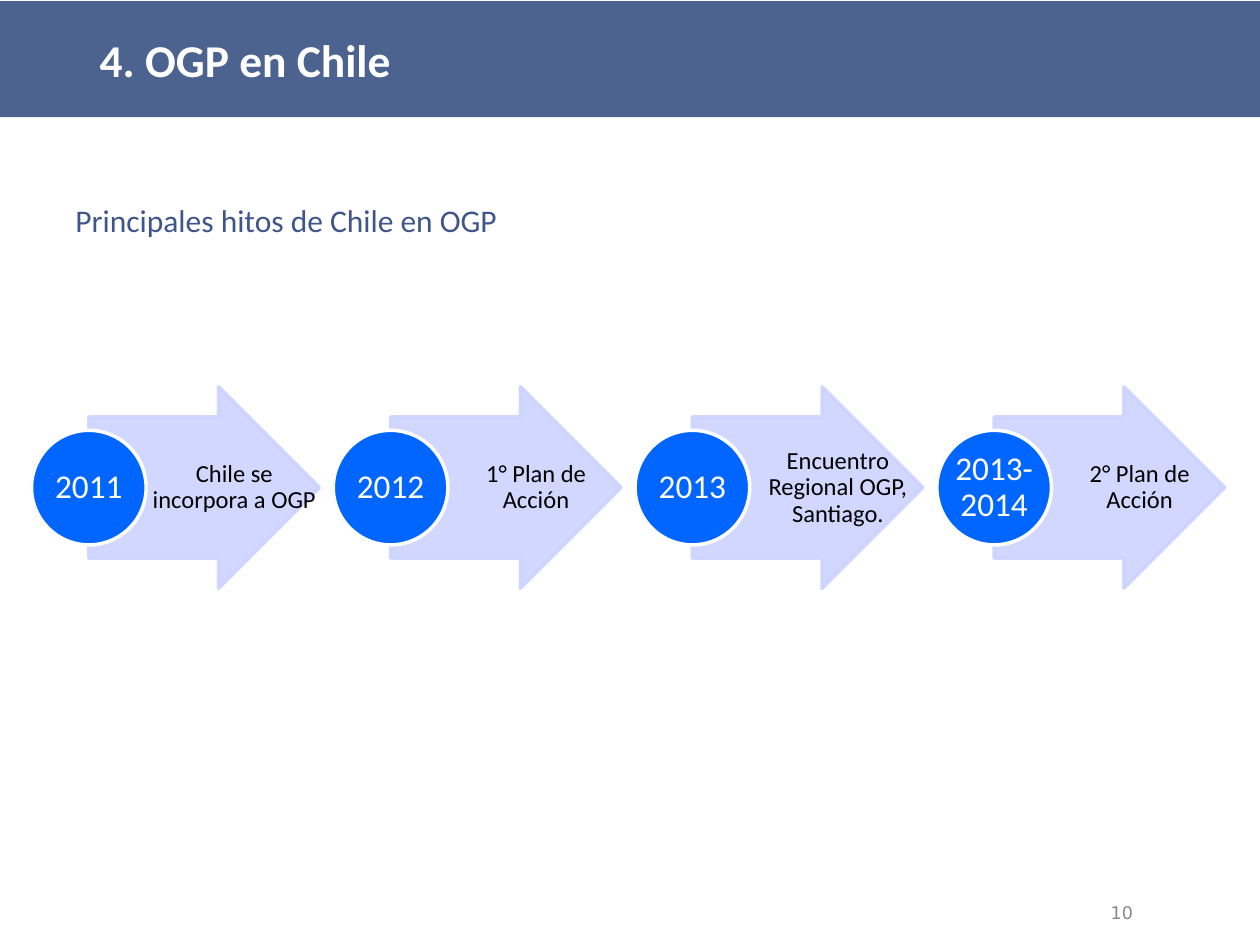
from typing import NamedTuple

from lxml import etree
from pptx import Presentation
from pptx.dml.color import RGBColor
from pptx.enum.shapes import MSO_SHAPE
from pptx.enum.text import MSO_ANCHOR, MSO_AUTO_SIZE, PP_ALIGN
from pptx.oxml.ns import qn
from pptx.util import Inches, Pt

ARROW, OVAL = MSO_SHAPE.RIGHT_ARROW, MSO_SHAPE.OVAL
LEFT, CENTER, RIGHT = PP_ALIGN.LEFT, PP_ALIGN.CENTER, PP_ALIGN.RIGHT
TOP, MIDDLE = MSO_ANCHOR.TOP, MSO_ANCHOR.MIDDLE
NO_FIT = MSO_AUTO_SIZE.NONE

COLORS = {
    "band": "002060",
    "arrow": "CCD3FF",
    "disc": "0066FF",
    "white": "FFFFFF",
    "black": "000000",
    "lead": "40558A",
    "number": "898989",
}

START, PITCH = 0.25, 2.395
DISC = 0.91
ARROW_W, ARROW_H = 1.83, 1.6
LABEL_W = 1.37
MID_Y = 3.87


class Stage(NamedTuple):
    year: str
    event: str


STAGES = [
    Stage("2011", "Chile se incorpora a OGP"),
    Stage("2012", "1° Plan de Acción"),
    Stage("2013", "Encuentro Regional OGP, Santiago."),
    Stage("2013-2014", "2° Plan de Acción"),
]


def rgb(name: str) -> RGBColor:
    return RGBColor.from_string(COLORS[name])


def paint(fill, name: str, alpha: int = 100) -> None:
    """Give a solid fill, with its opacity in percent."""
    fill.solid()
    fill.fore_color.rgb = rgb(name)
    if alpha < 100:
        tint = fill._xPr.find(qn("a:solidFill"))[0]
        etree.SubElement(tint, qn("a:alpha"), val=str(alpha * 1000))


def write(shape, text: str, *, size: float, color: str, font: str = "Calibri",
          bold: bool = False, align=LEFT, anchor=MIDDLE, space: float = 1.0,
          inset: tuple = (0.1, 0.05, 0.1, 0.05)) -> None:
    frame = shape.text_frame
    frame.auto_size = NO_FIT
    frame.word_wrap = True
    frame.vertical_anchor = anchor
    (frame.margin_left, frame.margin_top,
     frame.margin_right, frame.margin_bottom) = map(Inches, inset)
    para = frame.paragraphs[0]
    para.alignment = align
    para.line_spacing = space
    run = para.add_run()
    run.text = text
    run.font.name = font
    run.font.size = Pt(size)
    run.font.bold = bold
    run.font.color.rgb = rgb(color)


def add_box(slide, x: float, y: float, w: float, h: float):
    return slide.shapes.add_textbox(Inches(x), Inches(y), Inches(w), Inches(h))


def add_form(slide, kind, x: float, w: float, h: float, fill: str,
             line: str, alpha: int = 100):
    """Add a preset shape centred on the middle line of the row."""
    form = slide.shapes.add_shape(
        kind, Inches(x), Inches(MID_Y - h / 2), Inches(w), Inches(h))
    form.shadow.inherit = False
    paint(form.fill, fill, alpha)
    paint(form.line.fill, line, alpha)
    form.line.width = Pt(2)
    return form


def add_stage(slide, stage: Stage, x: float) -> None:
    arrow_x = x + DISC / 2
    arrow = add_form(slide, ARROW, arrow_x, ARROW_W, ARROW_H,
                     "arrow", "arrow", 90)
    arrow.adjustments[0] = 0.7
    arrow.adjustments[1] = 0.5
    label = add_box(slide, arrow_x + ARROW_W - LABEL_W, MID_Y - ARROW_H / 2,
                    LABEL_W, ARROW_H)
    write(label, stage.event, size=14, color="black", align=CENTER, space=0.9,
          inset=(0.04, 0.01, 0.02, 0.01))
    disc = add_form(slide, OVAL, x, DISC, DISC, "disc", "white")
    write(disc, stage.year, size=19, color="white", align=CENTER, space=0.9,
          inset=(0, 0, 0, 0))


def add_title(slide, text: str) -> None:
    title = slide.shapes.title
    title.left, title.top = Inches(0), Inches(0.01)
    title.width, title.height = Inches(10), Inches(0.92)
    paint(title.fill, "band", 70)
    write(title, text, size=26, color="white", bold=True,
          inset=(0.79, 0.05, 0.1, 0.05))


def main() -> None:
    deck = Presentation()
    deck.slide_width, deck.slide_height = Inches(10), Inches(7.5)
    slide = deck.slides.add_slide(deck.slide_layouts[5])

    add_title(slide, "4. OGP en Chile")
    lead = add_box(slide, 0.5, 1.55, 7.48, 0.4)
    write(lead, "Principales hitos de Chile en OGP", size=18, color="lead",
          anchor=TOP)
    for i, stage in enumerate(STAGES):
        add_stage(slide, stage, START + i * PITCH)
    number = add_box(slide, 6.76, 7.14, 2.33, 0.21)
    write(number, "10", size=10, color="number", font="DejaVu Sans",
          align=RIGHT)

    deck.save("out.pptx")


if __name__ == "__main__":
    main()
